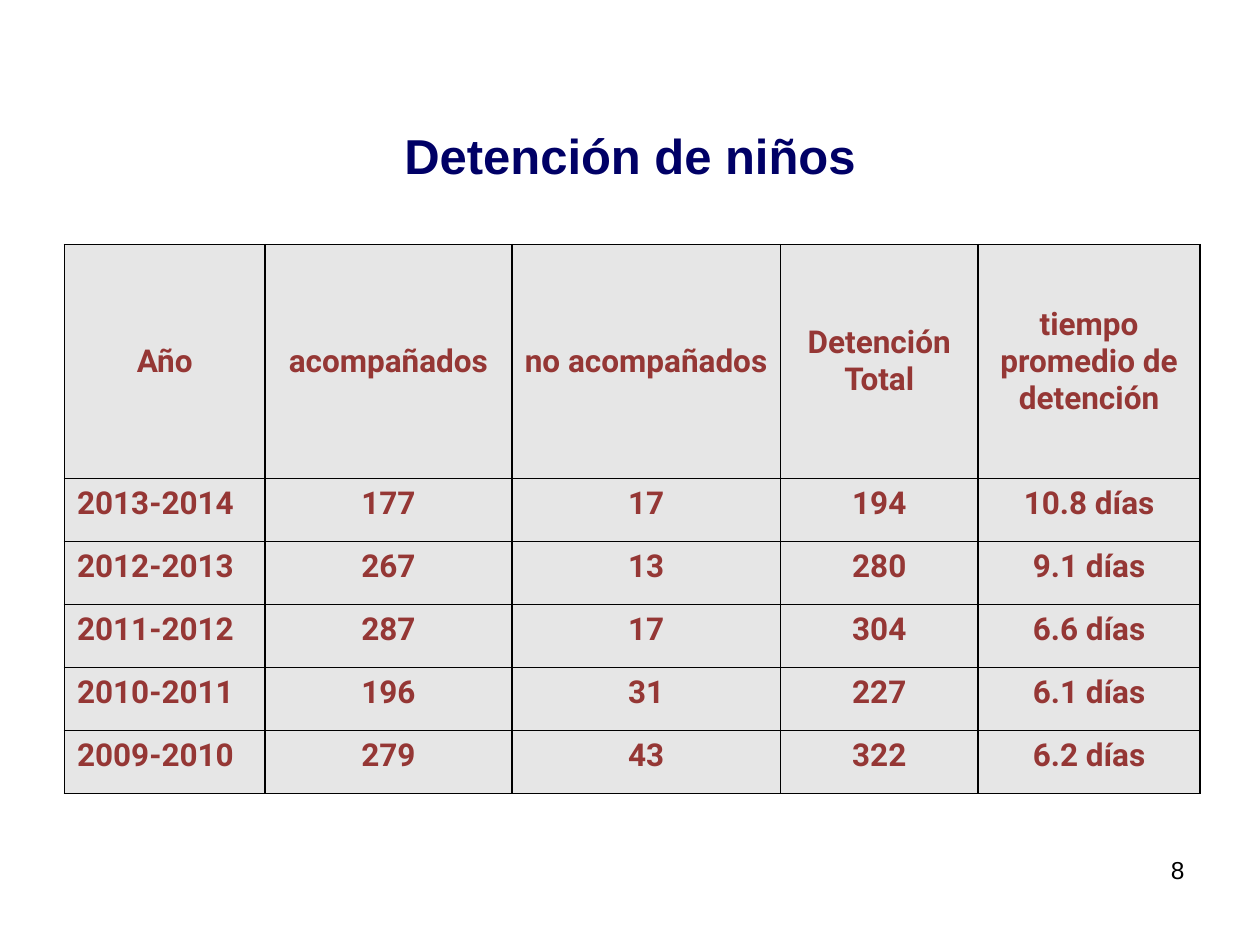
from lxml import etree
from pptx import Presentation
from pptx.dml.color import RGBColor
from pptx.enum.text import MSO_ANCHOR, PP_ALIGN
from pptx.oxml.ns import qn
from pptx.util import Cm, Pt

LEFT, CENTER, RIGHT = PP_ALIGN.LEFT, PP_ALIGN.CENTER, PP_ALIGN.RIGHT
TOP, MIDDLE = MSO_ANCHOR.TOP, MSO_ANCHOR.MIDDLE

TITLE = "Detención de niños"
PAGE_NUMBER = "8"
HEADERS = ["Año", "acompañados", "no acompañados", "Detención\nTotal",
           "tiempo promedio de detención"]
YEARS = [
    ("2013-2014", 177, 17, 194, "10.8 días"),
    ("2012-2013", 267, 13, 280, "9.1 días"),
    ("2011-2012", 287, 17, 304, "6.6 días"),
    ("2010-2011", 196, 31, 227, "6.1 días"),
    ("2009-2010", 279, 43, 322, "6.2 días"),
]
COLUMN_WIDTHS = [4.04, 4.98, 5.41, 3.99, 4.47]
HEADER_HEIGHT, YEAR_HEIGHT = 4.72, 1.27
NAVY, RED, GREY, BLACK = "000066", "953735", "E6E6E6", "000000"


def color(value):
    """Turn a hex string into a colour."""
    return RGBColor.from_string(value)


def write(frame, text, size=18, font="Roboto", ink=RED, bold=True, align=CENTER):
    """Fill a text frame with one paragraph per line of text."""
    frame.word_wrap = True
    frame.text = text
    for para in frame.paragraphs:
        para.alignment = align
        for span in para.runs:
            span.font.size = Pt(size)
            span.font.name = font
            span.font.bold = bold
            span.font.color.rgb = color(ink)


def add_text(page, text, left, top, width, height, anchor=TOP, **style):
    """Add a text box at a place given in centimetres."""
    box = page.shapes.add_textbox(Cm(left), Cm(top), Cm(width), Cm(height))
    box.text_frame.vertical_anchor = anchor
    write(box.text_frame, text, **style)


def add_borders(cell):
    """Draw a thin black line on every side of a cell."""
    properties = cell._tc.get_or_add_tcPr()
    for position, side in enumerate(("a:lnL", "a:lnR", "a:lnT", "a:lnB")):
        line = etree.Element(qn(side), w=str(Pt(1)))
        fill = etree.SubElement(line, qn("a:solidFill"))
        etree.SubElement(fill, qn("a:srgbClr"), val=BLACK)
        properties.insert(position, line)


def add_detention_table(page, left, top):
    """Add the table of detained children by year."""
    rows = [HEADERS, *YEARS]
    heights = [HEADER_HEIGHT] + [YEAR_HEIGHT] * len(YEARS)
    table = page.shapes.add_table(
        len(rows), len(HEADERS), Cm(left), Cm(top),
        Cm(sum(COLUMN_WIDTHS)), Cm(sum(heights))).table
    for column, width in zip(table.columns, COLUMN_WIDTHS):
        column.width = Cm(width)
    for row, height in zip(table.rows, heights):
        row.height = Cm(height)
    for row_index, values in enumerate(rows):
        for column_index, value in enumerate(values):
            cell = table.cell(row_index, column_index)
            is_header = row_index == 0
            is_year = column_index == 0 and not is_header
            cell.fill.solid()
            cell.fill.fore_color.rgb = color(GREY)
            cell.vertical_anchor = MIDDLE if is_header else TOP
            write(cell.text_frame, str(value), align=LEFT if is_year else CENTER)
            add_borders(cell)


def main():
    """Build the slide and save it."""
    deck = Presentation()
    deck.slide_width, deck.slide_height = Cm(25.4), Cm(19.05)
    page = deck.slides.add_slide(deck.slide_layouts[6])
    add_text(page, TITLE, 1.27, 2.31, 22.86, 1.63, anchor=MIDDLE,
             size=28, font="Arial", ink=NAVY)
    add_detention_table(page, 1.3, 4.93)
    add_text(page, PAGE_NUMBER, 18.21, 17.12, 5.92, 1.32,
             size=14, font="Arial", ink=BLACK, bold=False, align=RIGHT)
    deck.save("out.pptx")


if __name__ == "__main__":
    main()
